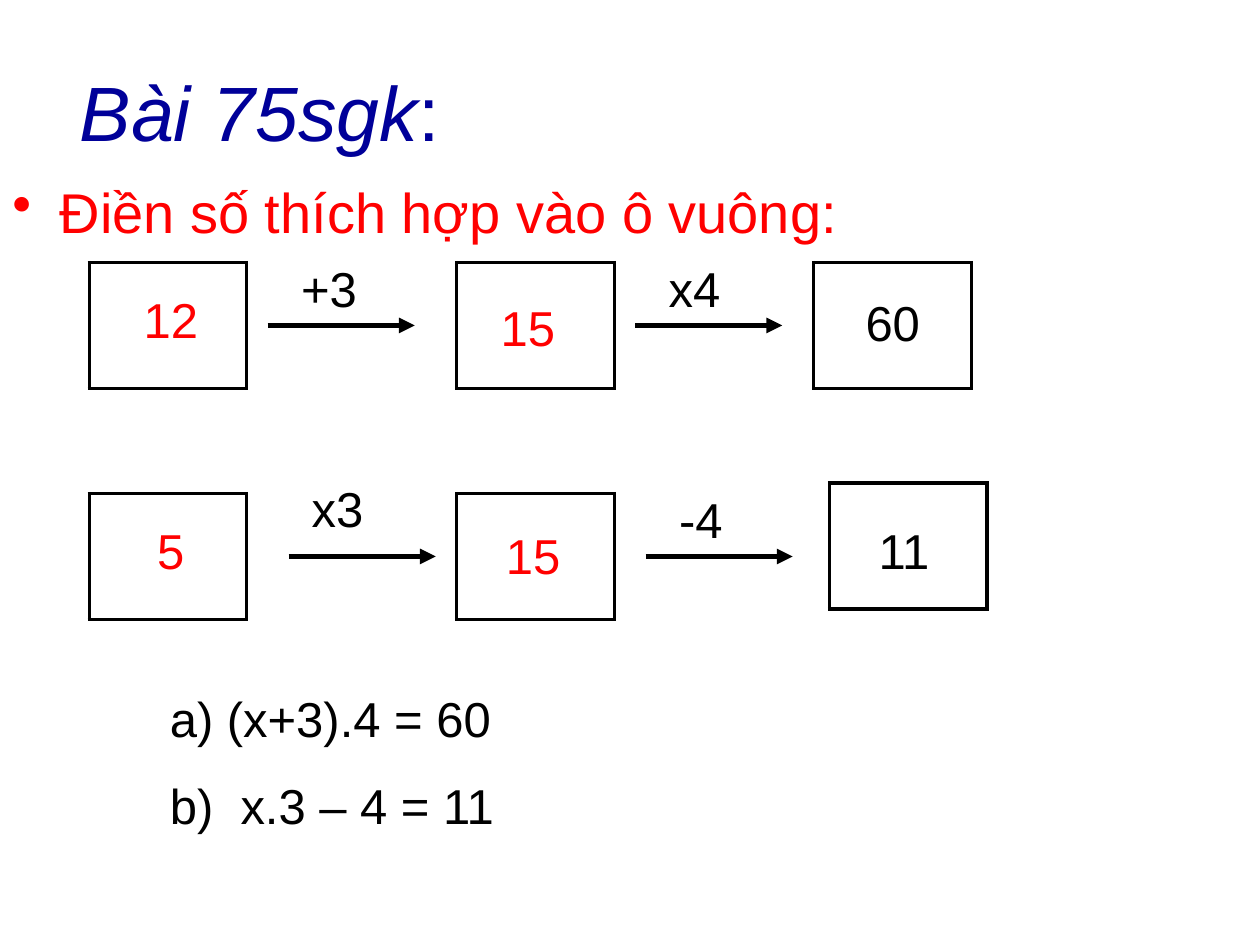
from lxml import etree
from pptx import Presentation
from pptx.dml.color import RGBColor
from pptx.enum.shapes import MSO_CONNECTOR
from pptx.enum.text import MSO_ANCHOR, PP_ALIGN
from pptx.oxml import parse_xml
from pptx.oxml.ns import nsdecls, qn
from pptx.util import Pt

STRAIGHT = MSO_CONNECTOR.STRAIGHT
MIDDLE = MSO_ANCHOR.MIDDLE
CENTER = PP_ALIGN.CENTER
BLACK = RGBColor(0x00, 0x00, 0x00)
RED = RGBColor(0xFF, 0x00, 0x00)
NAVY = RGBColor(0x00, 0x00, 0x99)
FONT = "Arial"
TITLE_ONLY = 5

BOX_WIDTH, BOX_HEIGHT = 90, 72
ARROW_LENGTH = 84
LABEL_WIDTH, LABEL_HEIGHT = 48, 41

# Left and top of the number boxes, row by row
BOXES = [(51, 150), (261, 150), (465, 150),
         (51, 282), (261, 282), (474, 276)]
# Start of each arrow
ARROWS = [(153, 186), (363, 186), (165, 318), (369, 318)]
# Text, left, top and colour
LABELS = [
    ("+3", 165, 144, BLACK), ("x4", 375, 144, BLACK),
    ("x3", 171, 270, BLACK), ("-4", 381, 276, BLACK),
    ("12", 75, 162, RED), ("15", 279, 166.5, RED), ("60", 487.5, 163.5, BLACK),
    (" 5", 75, 294, RED), ("15", 282, 297, RED), ("11", 495, 294, BLACK),
]


def set_font(font, size, colour):
    font.name = FONT
    font.size = Pt(size)
    font.color.rgb = colour


def set_title(page):
    title = page.shapes.title
    title.left, title.top, title.width, title.height = Pt(36), Pt(12), Pt(225), Pt(102)
    title.text_frame.vertical_anchor = MIDDLE
    para = title.text_frame.paragraphs[0]
    para.alignment = CENTER
    set_font(para.font, 44, NAVY)
    for text, italic in (("Bài 75sgk", True), (":", False)):
        span = para.add_run()
        span.text = text
        span.font.italic = italic


def add_text(page, lines, left, top, width, height, size, colour):
    box = page.shapes.add_textbox(Pt(left), Pt(top), Pt(width), Pt(height))
    frame = box.text_frame
    frame.word_wrap = True
    frame.text = "\n".join(lines)
    for para in frame.paragraphs:
        set_font(para.font, size, colour)
    for para in frame.paragraphs[1:]:
        para.space_before = Pt(16)
    return box


def add_bullet(para, indent):
    properties = para._p.get_or_add_pPr()
    properties.set("marL", str(Pt(indent)))
    properties.set("indent", str(-Pt(indent)))
    bullet = parse_xml(f'<a:buChar {nsdecls("a")} char="•"/>')
    properties.insert_element_before(bullet, "a:tabLst", "a:defRPr", "a:extLst")


def add_number_box(page, left, top):
    """Add an empty one-cell table with a black border."""
    table = page.shapes.add_table(
        1, 1, Pt(left), Pt(top), Pt(BOX_WIDTH), Pt(BOX_HEIGHT)).table
    table.first_row = table.horz_banding = False
    cell = table.cell(0, 0)
    cell.fill.background()
    properties = cell._tc.get_or_add_tcPr()
    for index, side in enumerate(("lnL", "lnR", "lnT", "lnB")):
        border = parse_xml(
            f'<a:{side} {nsdecls("a")} w="{Pt(2.25)}"><a:solidFill>'
            f'<a:srgbClr val="{BLACK}"/></a:solidFill></a:{side}>')
        properties.insert(index, border)


def add_arrow(page, left, top):
    arrow = page.shapes.add_connector(
        STRAIGHT, Pt(left), Pt(top), Pt(left + ARROW_LENGTH), Pt(top))
    arrow.line.color.rgb = BLACK
    arrow.line.width = Pt(3)
    etree.SubElement(arrow.line._get_or_add_ln(), qn("a:tailEnd"), type="triangle")
    etree.SubElement(arrow._element.spPr, qn("a:effectLst"))


def main():
    deck = Presentation()
    deck.slide_width, deck.slide_height = Pt(720), Pt(540)
    page = deck.slides.add_slide(deck.slide_layouts[TITLE_ONLY])

    set_title(page)
    task = add_text(page, ["Điền số thích hợp vào ô vuông:"], 0, 98, 648, 60, 32, RED)
    add_bullet(task.text_frame.paragraphs[0], 27)
    for left, top in BOXES:
        add_number_box(page, left, top)
    for left, top in ARROWS:
        add_arrow(page, left, top)
    for text, left, top, colour in LABELS:
        add_text(page, [text], left, top, LABEL_WIDTH, LABEL_HEIGHT, 28, colour)
    add_text(page, ["a) (x+3).4 = 60", "b)  x.3 – 4 = 11"],
             90, 390, 360, 91.5, 28, BLACK)

    deck.save("out.pptx")


if __name__ == "__main__":
    main()
